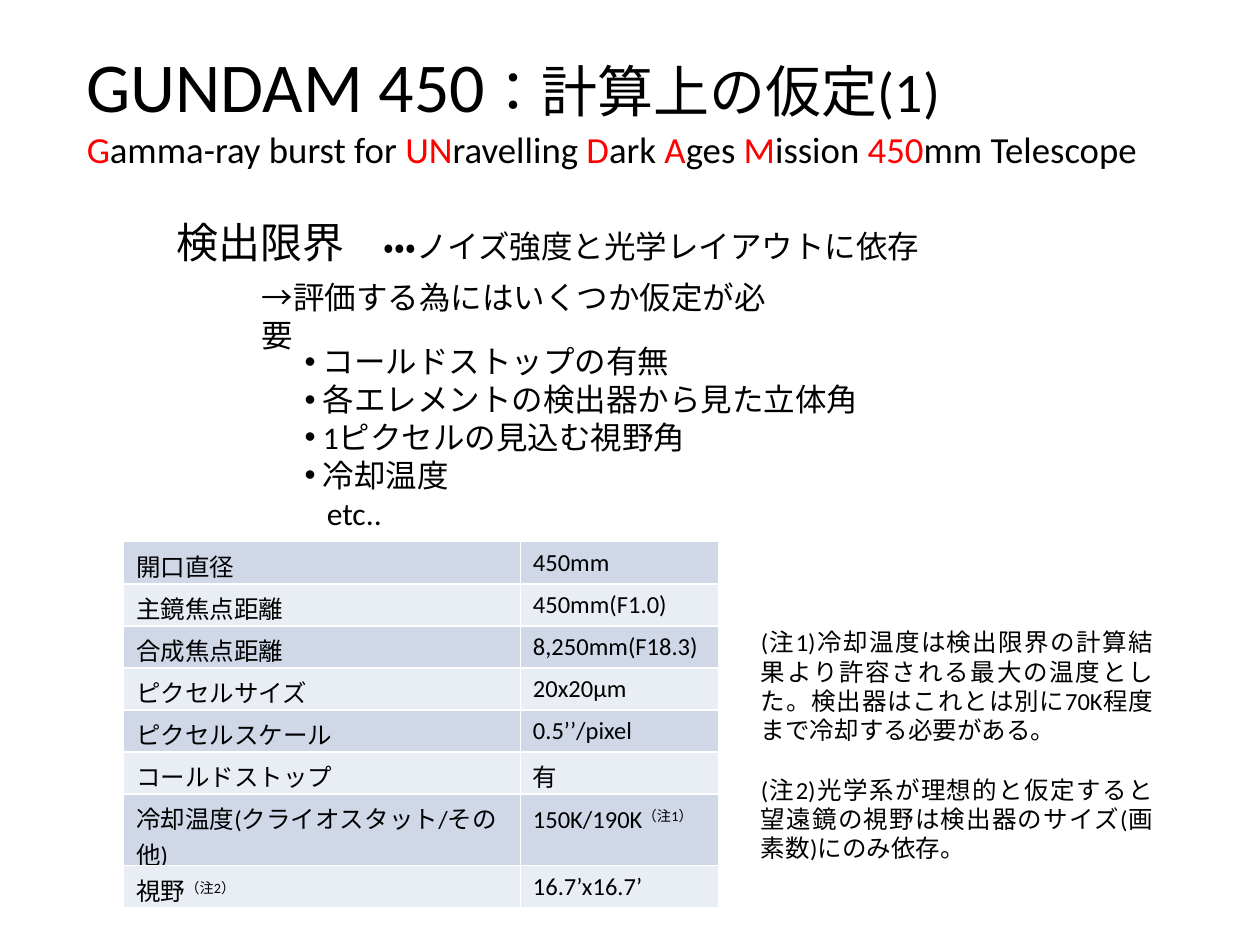
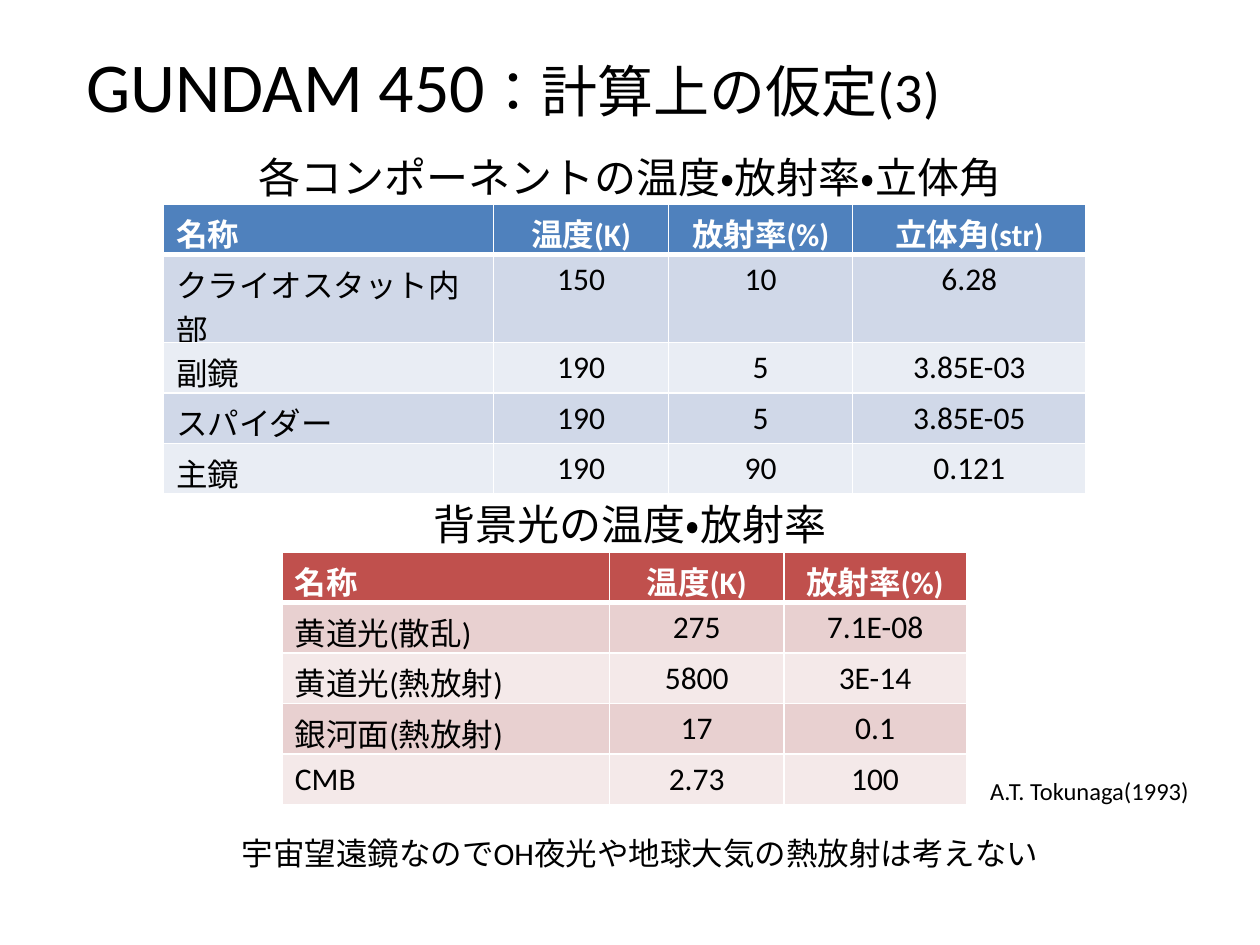
from lxml.etree import SubElement
from pptx import Presentation
from pptx.dml.color import RGBColor
from pptx.enum.lang import MSO_LANGUAGE_ID as Language
from pptx.enum.text import MSO_AUTO_SIZE as AutoSize, PP_ALIGN as Align
from pptx.oxml.ns import qn
from pptx.util import Cm, Pt

FONT = "Calibri"
BLACK = RGBColor(0x00, 0x00, 0x00)
WHITE = RGBColor(0xFF, 0xFF, 0xFF)
RED = RGBColor(0xFF, 0x00, 0x00)
BLUE = RGBColor(0x4F, 0x81, 0xBD)
BLUE_BANDS = (RGBColor(0xD0, 0xD8, 0xE8), RGBColor(0xE9, 0xED, 0xF4))
BRICK = RGBColor(0xC0, 0x50, 0x4D)
BRICK_BANDS = (RGBColor(0xE8, 0xD0, 0xD0), RGBColor(0xF4, 0xE9, 0xE9))

ACRONYM = [
    ("G", RED), ("amma-ray burst for ", BLACK), ("UN", RED),
    ("ravelling ", BLACK), ("D", RED), ("ark ", BLACK), ("A", RED),
    ("ges ", BLACK), ("M", RED), ("ission ", BLACK), ("450", RED),
    ("mm Telescope", BLACK),
]
ASSUMPTIONS = [
    "コールドストップの有無",
    "各エレメントの検出器から見た立体角",
    "1ピクセルの見込む視野角",
    "冷却温度",
]
NOTES = [
    "(注1)冷却温度は検出限界の計算結果より許容される最大の温度とした。"
    "検出器はこれとは別に70K程度まで冷却する必要がある。",
    "(注2)光学系が理想的と仮定すると望遠鏡の視野は検出器のサイズ(画素数)にのみ依存。",
]
TELESCOPE = [
    ("開口直径", "450mm"),
    ("主鏡焦点距離", "450mm(F1.0)"),
    ("合成焦点距離", "8,250mm(F18.3)"),
    ("ピクセルサイズ", "20x20μm"),
    ("ピクセルスケール", "0.5’’/pixel"),
    ("コールドストップ", "有"),
    ("冷却温度(クライオスタット/その他)", "150K/190K（注1）"),
    ("視野（注2）", "16.7’x16.7’"),
]
COMPONENTS = [
    ("名称", "温度(K)", "放射率(%)", "立体角(str)"),
    ("クライオスタット内部", "150", "10", "6.28"),
    ("副鏡", "190", "5", "3.85E-03"),
    ("スパイダー", "190", "5", "3.85E-05"),
    ("主鏡", "190", "90", "0.121"),
]
BACKGROUND = [
    ("名称", "温度(K)", "放射率(%)"),
    ("黄道光(散乱)", "275", "7.1E-08"),
    ("黄道光(熱放射)", "5800", "3E-14"),
    ("銀河面(熱放射)", "17", "0.1"),
    ("CMB", "2.73", "100"),
]


def add_span(para, text, size, color=BLACK, bold=False):
    span = para.add_run()
    span.text = text
    font = span.font
    font.name, font.size, font.bold = FONT, Pt(size), bold
    font.color.rgb = color
    font.language_id = Language.JAPANESE
    return span


def add_text(page, box, lines, size, align=Align.LEFT, wrap=True):
    """Place one paragraph per line in a box of (left, top, width, height) cm."""
    frame = page.shapes.add_textbox(*map(Cm, box)).text_frame
    frame.word_wrap = wrap
    frame.auto_size = AutoSize.SHAPE_TO_FIT_TEXT
    for index, line in enumerate(lines):
        para = frame.paragraphs[0] if index == 0 else frame.add_paragraph()
        para.alignment = align
        add_span(para, line, size)
    return frame


def add_title(page, number, height):
    frame = add_text(page, (1.5, 0.74, 22.4, height), ["GUNDAM 450"], 40)
    add_span(frame.paragraphs[0], f"：計算上の仮定({number})", 32)
    return frame


def add_heading(page, top, text):
    add_text(page, (0, top, 25.4, 1.27), [text], 24, Align.CENTER)


def add_assumptions(page, box):
    frame = add_text(page, box, ASSUMPTIONS + ["etc.."], 18)
    *items, closing = frame.paragraphs
    for para in items:
        props = para._p.get_or_add_pPr()
        props.set("marL", str(Cm(0.37)))
        props.set("indent", str(-Cm(0.37)))
        SubElement(props, qn("a:buFont")).set("typeface", "Arial")
        SubElement(props, qn("a:buChar")).set("char", "•")
    closing._p.get_or_add_pPr().set("marL", str(Cm(0.45)))


def set_borders(cell, top, bottom):
    props = cell._tc.get_or_add_tcPr()
    for side, width in (("L", 1), ("R", 1), ("T", top), ("B", bottom)):
        line = SubElement(props, qn(f"a:ln{side}"), w=str(Pt(width)))
        fill = SubElement(line, qn("a:solidFill"))
        SubElement(fill, qn("a:srgbClr"), val=str(WHITE))


def fill_cell(cell, text, size, fill, is_header, align):
    cell.fill.solid()
    cell.fill.fore_color.rgb = fill
    para = cell.text_frame.paragraphs[0]
    para.alignment = align
    color = WHITE if is_header else BLACK
    body, mark, note = text.partition("（")
    add_span(para, body, size, color, is_header)
    if mark:
        span = add_span(para, mark + note, size, color)
        span._r.get_or_add_rPr().set("baseline", "30000")


def add_grid(page, box, widths, row_height, rows, size, bands,
             header=None, value_align=Align.CENTER):
    """Place a banded table; its first row is a heading if header is a colour."""
    left, top, height = box
    holder = page.shapes.add_table(len(rows), len(widths), Cm(left), Cm(top),
                                   Cm(sum(widths)), Cm(height))
    table = holder.table
    table.first_row = table.horz_banding = False
    for column, width in zip(table.columns, widths):
        column.width = Cm(width)
    body_start = 1 if header else 0
    for r, values in enumerate(rows):
        table.rows[r].height = Cm(row_height)
        is_header = r < body_start
        fill = header if is_header else bands[(r - body_start) % 2]
        for c, value in enumerate(values):
            cell = table.cell(r, c)
            set_borders(cell, top=3 if header and r == 1 else 1,
                        bottom=3 if is_header else 1)
            fill_cell(cell, value, size, fill, is_header,
                      value_align if c else Align.LEFT)
    holder.height = Cm(height)


def build_assumptions_page(page):
    title = add_title(page, 1, 2.87)
    subtitle = title.add_paragraph()
    for text, color in ACRONYM:
        add_span(subtitle, text, 21, color)

    add_text(page, (7.49, 4.45, 12.19, 1.02),
             ["・・・ノイズ強度と光学レイアウトに依存"], 18)
    add_text(page, (3.3, 4.24, 3.94, 1.27), ["検出限界"], 24)
    add_text(page, (5.03, 5.49, 10.87, 1.02),
             ["→評価する為にはいくつか仮定が必要"], 18)
    add_assumptions(page, (5.89, 6.78, 11.81, 3.33))
    add_grid(page, (2.49, 10.92, 6.78), (8, 3.99), 0.74, TELESCOPE, 14,
             BLUE_BANDS, value_align=Align.LEFT)
    notes = add_text(page, (15.09, 12.52, 8.41, 5.05), NOTES, 14, Align.JUSTIFY)
    notes.paragraphs[1].space_before = Pt(17)


def build_emissivity_page(page):
    add_title(page, 3, 1.96)
    add_heading(page, 2.92, "各コンポーネントの温度・放射率・立体角")
    add_grid(page, (3.3, 4.11, 5.08), (6.65, 3.53, 3.71, 4.7), 0.99,
             COMPONENTS, 18, BLUE_BANDS, BLUE)
    add_heading(page, 9.93, "背景光の温度・放射率")
    add_grid(page, (5.69, 11.13, 5.08), (6.6, 3.51, 3.68), 0.89,
             BACKGROUND, 18, BRICK_BANDS, BRICK)
    add_text(page, (19.71, 15.52, 4.55, 0.86), ["A.T. Tokunaga(1993)"], 14,
             wrap=False)
    add_text(page, (4.62, 16.69, 16.87, 1.02),
             ["宇宙望遠鏡なのでOH夜光や地球大気の熱放射は考えない"], 18, wrap=False)


def main():
    deck = Presentation()
    deck.slide_width, deck.slide_height = Cm(25.4), Cm(19.05)
    for build in (build_assumptions_page, build_emissivity_page):
        build(deck.slides.add_slide(deck.slide_layouts[6]))
    deck.save("out.pptx")


if __name__ == "__main__":
    main()
